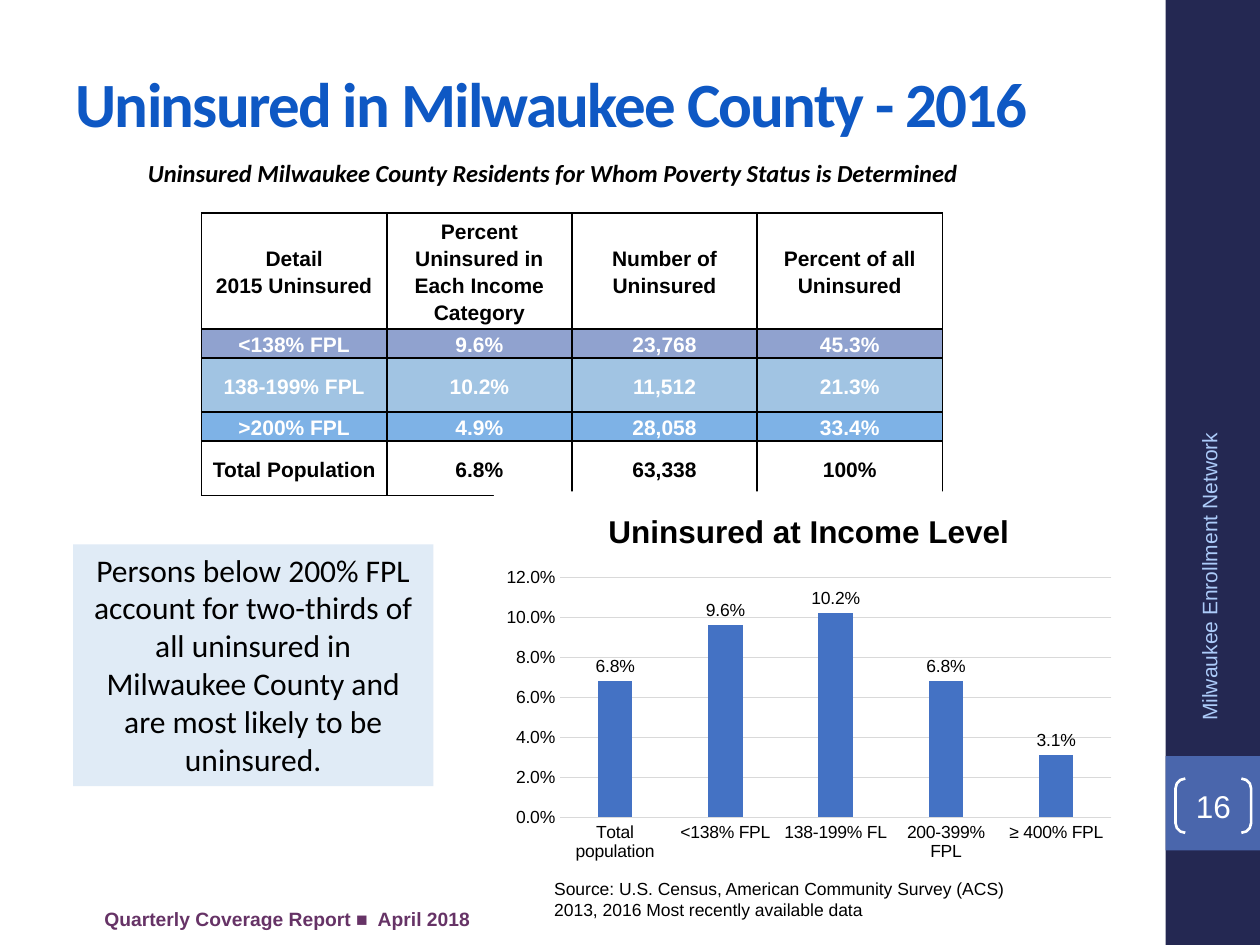
import pptx
import pptx.chart.data
import pptx.dml.color
import pptx.enum.chart
import pptx.enum.shapes
import pptx.enum.text
import pptx.oxml
import pptx.oxml.ns
import pptx.util

Inches, Pt = pptx.util.Inches, pptx.util.Pt
RGBColor = pptx.dml.color.RGBColor
SHAPE = pptx.enum.shapes.MSO_SHAPE
ALIGN = pptx.enum.text.PP_ALIGN
ANCHOR = pptx.enum.text.MSO_ANCHOR

# Colours
BLACK = RGBColor(0x00, 0x00, 0x00)
WHITE = RGBColor(0xFF, 0xFF, 0xFF)
NAVY = RGBColor(0x24, 0x28, 0x52)
INDIGO = RGBColor(0x4A, 0x66, 0xAC)
PALE_BLUE = RGBColor(0xAC, 0xCB, 0xF9)
TITLE_BLUE = RGBColor(0x0E, 0x58, 0xC4)
CALLOUT_BLUE = RGBColor(0xE0, 0xEB, 0xF6)
BAR_BLUE = RGBColor(0x44, 0x72, 0xC4)
GRID_GREY = RGBColor(0xD9, 0xD9, 0xD9)
PLUM = RGBColor(0x66, 0x33, 0x66)
ROW_LOW = RGBColor(0x90, 0xA2, 0xCF)
ROW_MIDDLE = RGBColor(0xA1, 0xC4, 0xE3)
ROW_HIGH = RGBColor(0x7E, 0xB2, 0xE6)

# Content
TITLE = "Uninsured in Milwaukee County - 2016"
SUBTITLE = "Uninsured Milwaukee County Residents for Whom Poverty Status is Determined"
CALLOUT = ("Persons below 200% FPL account for two-thirds of all uninsured in "
           "Milwaukee County and are most likely to be uninsured.")
SOURCE = ("Source: U.S. Census, American Community Survey (ACS) 2013, 2016 "
          "Most recently available data")
REPORT = "Quarterly Coverage Report ■  April 2018"
NETWORK = "Milwaukee Enrollment Network"
PAGE = "16"

# Each row: height, fill, text colour, cells
INCOME_ROWS = [
    (0.88, None, BLACK, ["Detail\n2015 Uninsured",
                         "Percent Uninsured in Each Income Category",
                         "Number of Uninsured", "Percent of all Uninsured"]),
    (0.21, ROW_LOW, WHITE, ["<138% FPL", "9.6%", "23,768", "45.3%"]),
    (0.43, ROW_MIDDLE, WHITE, ["138-199% FPL", "10.2%", "11,512", "21.3%"]),
    (0.21, ROW_HIGH, WHITE, [">200% FPL", "4.9%", "28,058", "33.4%"]),
    (0.43, None, BLACK, ["Total Population", "6.8%", "63,338", "100%"]),
]
COLUMN_WIDTH = 1.47

CHART_TITLE = "Uninsured at Income Level"
UNINSURED_RATES = {
    "Total population": 0.068,
    "<138% FPL": 0.096,
    "138-199% FL": 0.102,
    "200-399% FPL": 0.068,
    "≥ 400% FPL": 0.031,
}


def set_font(font, color, **values):
    for name, value in values.items():
        setattr(font, name, value)
    font.color.rgb = color


def write(frame, text, color, align=ALIGN.LEFT, anchor=ANCHOR.TOP,
          line_spacing=None, **font_values):
    frame.word_wrap = True
    frame.vertical_anchor = anchor
    frame.text = text
    for paragraph in frame.paragraphs:
        paragraph.alignment = align
        if line_spacing:
            paragraph.line_spacing = line_spacing
        for run in paragraph.runs:
            set_font(run.font, color, **font_values)


def add_block(box, fill=None, preset=SHAPE.RECTANGLE):
    block = slide.shapes.add_shape(preset, *map(Inches, box))
    block.shadow.inherit = False
    block.line.fill.background()
    if fill is None:
        block.fill.background()
    else:
        block.fill.solid()
        block.fill.fore_color.rgb = fill
    return block


def add_text(box, text, color, **values):
    label = slide.shapes.add_textbox(*map(Inches, box))
    write(label.text_frame, text, color, **values)
    return label


def border_cell(cell):
    properties = cell._tc.get_or_add_tcPr()
    for index, side in enumerate(("lnL", "lnR", "lnT", "lnB")):
        properties.insert(index, pptx.oxml.parse_xml(
            f'<a:{side} {pptx.oxml.ns.nsdecls("a")} w="12700"><a:solidFill>'
            f'<a:srgbClr val="{BLACK}"/></a:solidFill></a:{side}>'))


presentation = pptx.Presentation()
presentation.slide_width, presentation.slide_height = Inches(10), Inches(7.5)
slide = presentation.slides.add_slide(presentation.slide_layouts[5])

# Sidebar with network name and page number
add_block((9.25, 0, 0.75, 7.5), NAVY)
add_block((9.25, 6, 0.75, 0.75), INDIGO)
network = add_text((8.3, 4.43, 2.59, 0.4), NETWORK, PALE_BLUE, align=ALIGN.RIGHT,
                   anchor=ANCHOR.MIDDLE, name="Arial", size=Pt(12))
network.rotation = 270
page = add_block((9.33, 6.18, 0.6, 0.43), preset=SHAPE.DOUBLE_BRACKET)
page.adjustments[0] = 0.18
page.line.color.rgb = WHITE
page.line.width = Pt(1.5)
for margin in ("margin_left", "margin_top", "margin_right", "margin_bottom"):
    setattr(page.text_frame, margin, 0)
write(page.text_frame, PAGE, WHITE, align=ALIGN.CENTER, anchor=ANCHOR.MIDDLE,
      name="Arial", size=Pt(18))

# Title and subtitle
title = slide.shapes.title
title.left, title.top, title.width, title.height = map(Inches, (0.5, 0.22, 8.08, 1.19))
write(title.text_frame, TITLE, TITLE_BLUE, anchor=ANCHOR.MIDDLE,
      name="Calibri", size=Pt(36), bold=True)
title.text_frame.paragraphs[0].runs[0].font._element.set("spc", "-100")
subtitle = add_block((0.58, 1.17, 7.62, 0.31), WHITE)
write(subtitle.text_frame, SUBTITLE, BLACK, align=ALIGN.CENTER, line_spacing=1.15,
      name="Calibri", size=Pt(14), bold=True, italic=True)

# Income table
column_count = len(INCOME_ROWS[0][3])
income_table = slide.shapes.add_table(
    len(INCOME_ROWS), column_count, Inches(1.6), Inches(1.69),
    Inches(COLUMN_WIDTH * column_count), Inches(sum(row[0] for row in INCOME_ROWS))).table
income_table.first_row = income_table.horz_banding = False
for column in income_table.columns:
    column.width = Inches(COLUMN_WIDTH)
for row, (height, fill, color, texts) in zip(income_table.rows, INCOME_ROWS):
    row.height = Inches(height)
    for cell, text in zip(row.cells, texts):
        cell.margin_left = cell.margin_right = Inches(0.07)
        cell.margin_top = cell.margin_bottom = 0
        write(cell.text_frame, text, color, align=ALIGN.CENTER, line_spacing=1.15,
              name="Arial", size=Pt(12), bold=True)
        cell.vertical_anchor = ANCHOR.MIDDLE
        if fill is None:
            cell.fill.background()
        else:
            cell.fill.solid()
            cell.fill.fore_color.rgb = fill
        border_cell(cell)

# Rate chart
rate_data = pptx.chart.data.CategoryChartData(number_format="0.0%")
rate_data.categories = list(UNINSURED_RATES)
rate_data.add_series("Series 1", list(UNINSURED_RATES.values()))
rate_chart = slide.shapes.add_chart(
    pptx.enum.chart.XL_CHART_TYPE.COLUMN_CLUSTERED,
    *map(Inches, (3.92, 3.9, 5, 3)), rate_data).chart
set_font(rate_chart.font, BLACK, name="Arial", size=Pt(10))
rate_chart.has_legend = False
write(rate_chart.chart_title.text_frame, CHART_TITLE, BLACK, align=ALIGN.CENTER,
      name="Arial", size=Pt(18), bold=True)
rate_chart.chart_title.include_in_layout = False
rate_chart._chartSpace.find(pptx.oxml.ns.qn("c:chart")).addnext(pptx.oxml.parse_xml(
    f'<c:spPr {pptx.oxml.ns.nsdecls("c", "a")}><a:solidFill><a:srgbClr val="{WHITE}"/>'
    '</a:solidFill><a:ln><a:noFill/></a:ln></c:spPr>'))

rates = rate_chart.plots[0]
rates.gap_width, rates.overlap, rates.vary_by_categories = 219, -27, False
rates.series[0].format.fill.solid()
rates.series[0].format.fill.fore_color.rgb = BAR_BLUE
rates.has_data_labels = True
for name, value in {"show_value": True, "number_format": "0.0%",
                    "number_format_is_linked": False,
                    "position": pptx.enum.chart.XL_LABEL_POSITION.OUTSIDE_END}.items():
    setattr(rates.data_labels, name, value)

category_axis, value_axis = rate_chart.category_axis, rate_chart.value_axis
for axis in (category_axis, value_axis):
    axis.major_tick_mark = pptx.enum.chart.XL_TICK_MARK.NONE
value_axis.format.line.fill.background()
value_axis.tick_labels.number_format = "0.0%"
value_axis.tick_labels.number_format_is_linked = False
for line in (category_axis.format.line, value_axis.major_gridlines.format.line):
    line.color.rgb = GRID_GREY
    line.width = Pt(0.75)

# Callout, source and footer
callout = add_block((0.58, 4.32, 2.86, 1.92), CALLOUT_BLUE)
write(callout.text_frame, CALLOUT, BLACK, align=ALIGN.CENTER, name="Calibri", size=Pt(18))
add_text((4.3, 6.92, 4.08, 0.44), SOURCE, BLACK, name="Arial", size=Pt(10))
add_text((0.73, 7.09, 4.16, 0.4), REPORT, PLUM, anchor=ANCHOR.MIDDLE,
         name="Arial", size=Pt(11), bold=True)

presentation.save("out.pptx")
